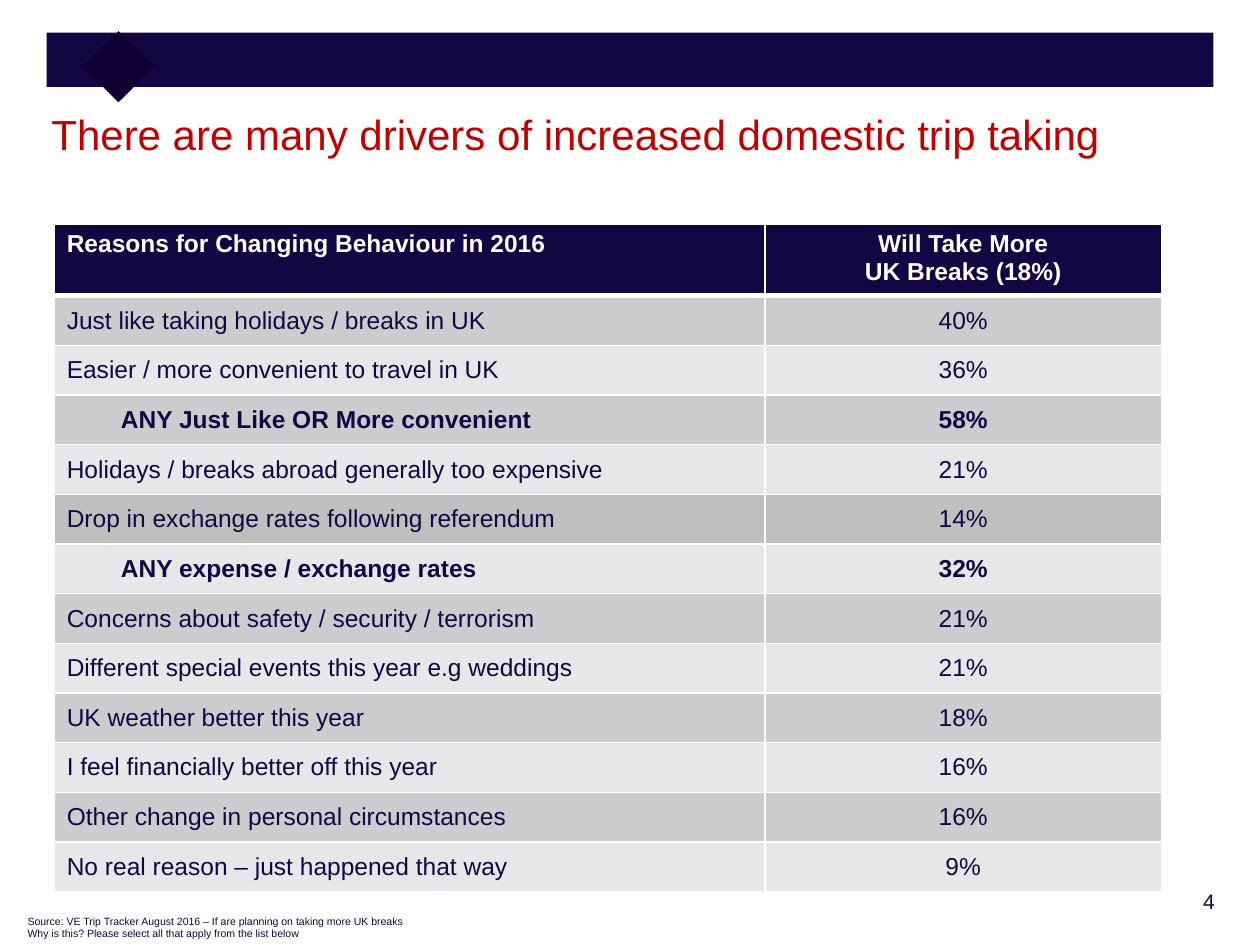
from dataclasses import dataclass

from lxml.etree import SubElement
from pptx import Presentation
from pptx.dml.color import RGBColor
from pptx.enum.shapes import MSO_SHAPE
from pptx.enum.text import MSO_ANCHOR, PP_ALIGN
from pptx.oxml.ns import qn
from pptx.util import Inches, Pt


@dataclass(frozen=True)
class Theme:
    font: str = "Arial"
    navy: str = "120742"
    diamond: str = "0E0033"
    title: str = "C00000"
    white: str = "FFFFFF"
    dark_band: str = "CCCCCF"
    light_band: str = "E7E7E9"
    highlight: str = "BFBFBF"
    title_size: int = 24
    table_size: int = 14
    number_size: int = 12
    source_size: int = 6


THEME = Theme()

HEADINGS = [["Reasons for Changing Behaviour in 2016"],
            ["Will Take More", "UK Breaks (18%)"]]
REASONS = [
    ("Just like taking holidays / breaks in UK", "40%"),
    ("Easier / more convenient to travel in UK", "36%"),
    ("ANY Just Like OR More convenient", "58%"),
    ("Holidays / breaks abroad generally too expensive", "21%"),
    ("Drop in exchange rates following referendum", "14%"),
    ("ANY expense / exchange rates", "32%"),
    ("Concerns about safety / security / terrorism", "21%"),
    ("Different special events this year e.g weddings", "21%"),
    ("UK weather better this year", "18%"),
    ("I feel financially better off this year", "16%"),
    ("Other change in personal circumstances", "16%"),
    ("No real reason – just happened that way", "9%"),
]
HIGHLIGHTED = "Drop in exchange rates following referendum"
COLUMN_WIDTHS = (5.64, 3.15)
TABLE_HEIGHT, HEADER_HEIGHT = 5.29, 0.56


def color(value):
    return RGBColor.from_string(value)


def write(frame, lines, size, fill, align=PP_ALIGN.LEFT, bold=False):
    for index, line in enumerate(lines):
        para = frame.paragraphs[0] if index == 0 else frame.add_paragraph()
        para.alignment = align
        span = para.add_run()
        span.text = line
        formats = {"name": THEME.font, "size": Pt(size), "bold": bold}
        for name, value in formats.items():
            setattr(span.font, name, value)
        span.font.color.rgb = color(fill)


def add_text(page, area, lines, size, fill, align=PP_ALIGN.LEFT, top=0.05):
    box = page.shapes.add_textbox(*map(Inches, area))
    frame = box.text_frame
    formats = {"word_wrap": True, "vertical_anchor": MSO_ANCHOR.TOP,
               "margin_top": Inches(top)}
    for name, value in formats.items():
        setattr(frame, name, value)
    write(frame, lines, size, fill, align)


def add_block(page, area, fill, rotation=0):
    block = page.shapes.add_shape(MSO_SHAPE.RECTANGLE, *map(Inches, area))
    block.shadow.inherit = False
    block.rotation = rotation
    block.fill.solid()
    block.fill.fore_color.rgb = color(fill)
    block.line.fill.background()


def set_borders(cell, bottom=1):
    """Draw white cell borders, placed ahead of the cell fill as the schema asks."""
    properties = cell._tc.get_or_add_tcPr()
    widths = {"a:lnL": 1, "a:lnR": 1, "a:lnT": 1, "a:lnB": bottom}
    for index, (tag, width) in enumerate(widths.items()):
        line = SubElement(properties, qn(tag), w=str(Pt(width)))
        SubElement(SubElement(line, qn("a:solidFill")), qn("a:srgbClr"), val=THEME.white)
        properties.insert(index, line)


def fill_cell(cell, lines, fill, text_color, align, bold, anchor, bottom=1):
    cell.fill.solid()
    cell.fill.fore_color.rgb = color(fill)
    cell.vertical_anchor = anchor
    write(cell.text_frame, lines, THEME.table_size, text_color, align, bold)
    set_borders(cell, bottom)


def add_reasons_table(page):
    area = (0.43, 1.78, sum(COLUMN_WIDTHS), TABLE_HEIGHT)
    table = page.shapes.add_table(
        len(REASONS) + 1, len(COLUMN_WIDTHS), *map(Inches, area)).table
    for column, width in zip(table.columns, COLUMN_WIDTHS):
        column.width = Inches(width)
    row_height = (TABLE_HEIGHT - HEADER_HEIGHT) / len(REASONS)
    for index, row in enumerate(table.rows):
        row.height = Inches(row_height if index else HEADER_HEIGHT)

    alignments = (PP_ALIGN.LEFT, PP_ALIGN.CENTER)
    for column, (lines, align) in enumerate(zip(HEADINGS, alignments)):
        fill_cell(table.cell(0, column), lines, THEME.navy, THEME.white,
                  align, True, MSO_ANCHOR.TOP, bottom=3)
    for row, values in enumerate(REASONS, start=1):
        subtotal = values[0].startswith("ANY")
        band = THEME.dark_band if row % 2 else THEME.light_band
        if values[0] == HIGHLIGHTED:
            band = THEME.highlight
        for column, (value, align) in enumerate(zip(values, alignments)):
            fill_cell(table.cell(row, column), [value], band, THEME.navy,
                      align, subtotal, MSO_ANCHOR.MIDDLE)
        if subtotal:
            table.cell(row, 0).margin_left = Inches(0.53)


def main():
    deck = Presentation()
    deck.slide_width, deck.slide_height = Inches(10), Inches(7.5)
    page = deck.slides.add_slide(deck.slide_layouts[6])

    add_text(page, (8.53, 7, 1.21, 0.36), ["4"],
             THEME.number_size, THEME.navy, PP_ALIGN.RIGHT)
    add_block(page, (0.37, 0.26, 9.26, 0.43), THEME.navy)
    add_block(page, (0.74, 0.33, 0.4, 0.4), THEME.diamond, rotation=45)
    add_reasons_table(page)
    add_text(page, (0.12, 7.21, 9.29, 0.3),
             ["Source: VE Trip Tracker August 2016 – If are planning on taking more UK breaks",
              "Why is this? Please select all that apply from the list below"],
             THEME.source_size, THEME.navy)
    add_text(page, (0.31, 0.78, 8.91, 0.89),
             ["There are many drivers of increased domestic trip taking"],
             THEME.title_size, THEME.title, top=0.08)
    deck.save("out.pptx")


if __name__ == "__main__":
    main()
